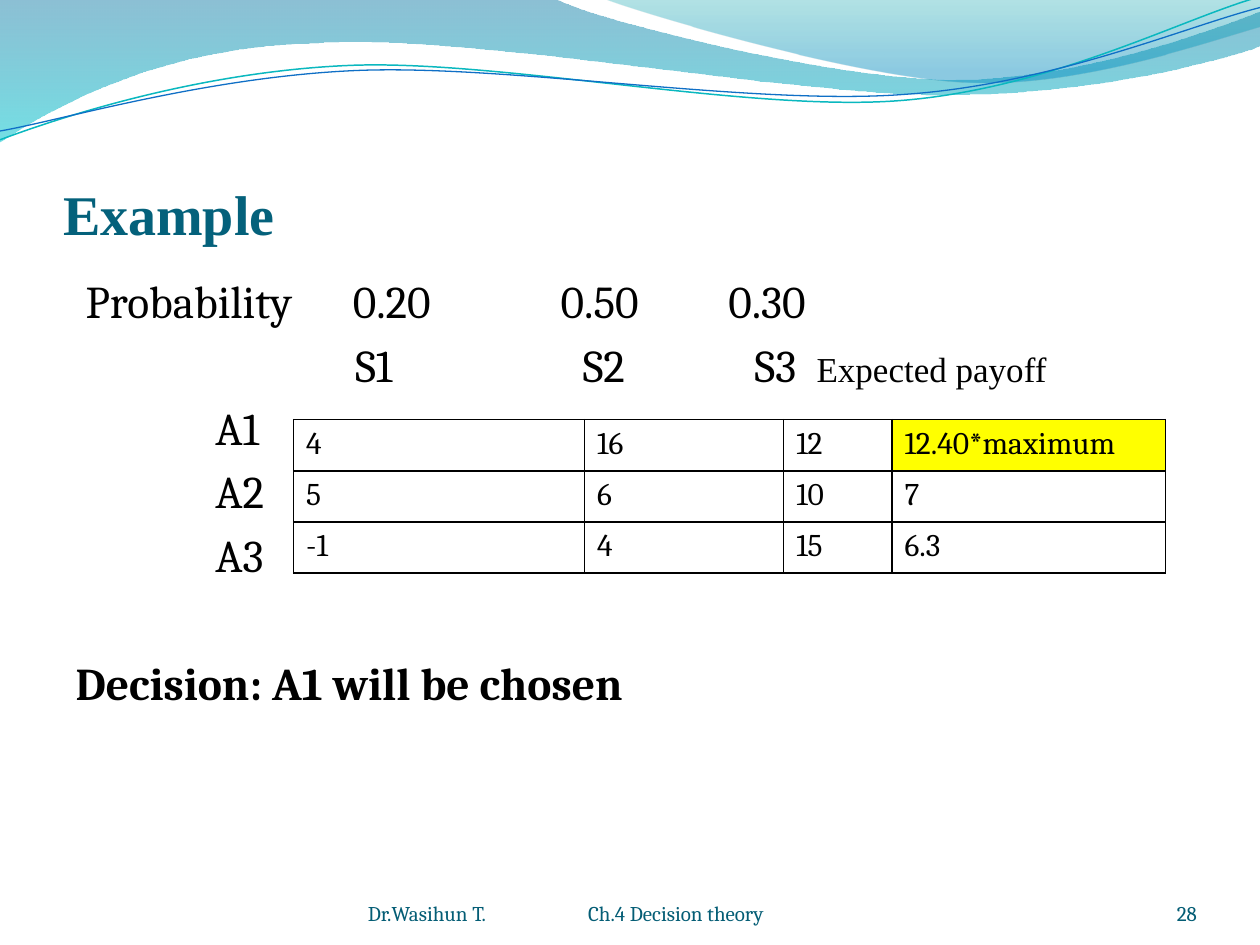
from lxml.etree import SubElement
from pptx import Presentation
from pptx.dml.color import RGBColor
from pptx.enum.text import MSO_ANCHOR as Anchor, MSO_AUTO_SIZE as AutoSize, PP_ALIGN as Align
from pptx.oxml.ns import qn
from pptx.util import Inches, Pt

THEME = {
    "serif": "Cambria", "display": "Times New Roman",
    "black": "000000", "title": "04617B", "footer": "045D75", "highlight": "FFFF00",
    "title_size": 32, "body_size": 26, "note_size": 20, "table_size": 18, "footer_size": 12,
}
SPACE_EM = 0.22  # width of a plain space in the serif font

TITLE = "Example"
NOTE = "Expected payoff"
# words, gaps between them, left margin, space before, bold
BODY = [
    (("Probability", "0.20", "0.50", "0.30"), (0.48, 1.03, 0.71), 0.08, 6, False),
    (("S1", "S2", "S3", NOTE), (1.51, 1.03, 0.16), 2.22, 5, False),
    (("A1",), (), 1.11, 5, False),
    (("A2",), (), 1.11, 5, False),
    (("A3",), (), 1.11, 5, False),
    (("Decision: A1 will be chosen",), (), 0, 42, True),
]
PAYOFFS = [
    ("4", "16", "12", "12.40*maximum"),
    ("5", "6", "10", "7"),
    ("-1", "4", "15", "6.3"),
]
BEST = (0, 3)
COLUMN_WIDTHS = (2.31, 1.58, 0.86, 2.17)
TABLE_HEIGHT = 1.22
# words, gaps, box, alignment
FOOTERS = [
    (("Dr.Wasihun T.", "Ch.4 Decision theory"), (0.81,), (2.92, 6.95, 3.67, 0.4), Align.LEFT),
    (("28",), (), (8.67, 6.95, 0.83, 0.4), Align.RIGHT),
]

# A pair is a straight segment, six numbers are a cubic curve
BANDS = [
    ([(0, 0), (4.4, -0.01), (4.76, 0.17, 6.64, 0.63, 7.58, 0.63),
      (8.53, 0.63, 9.58, 0.26, 10, 0.09), (10.01, 0.36),
      (9.83, 0.44, 8.7, 0.76, 7.46, 0.75), (6.22, 0.75, 3.82, 0.28, 2.57, 0.34),
      (1.29, 0.36, 0.46, 0.83, -0.01, 1.13)],
     [(0, "0074A1", 45), (1, "00C6CF", 55)]),
    ([(4.79, -0.01), (5.09, 0.11, 6.82, 0.62, 7.69, 0.65),
      (8.56, 0.69, 9.61, 0.32, 10, 0.21), (10, 0)],
     [(0, "00A1A9", 30), (0.8, "008BBF", 45)]),
]
WAVES = [
    ([(0, 1.11), (0.48, 0.93, 1.58, 0.57, 2.77, 0.52),
      (3.95, 0.47, 5.93, 0.89, 7.13, 0.8), (8.33, 0.71, 9.38, 0.15, 9.98, -0.02)],
     "0AB8BF", 0.85),
    ([(0, 1.04), (0.47, 0.96, 1.64, 0.61, 2.83, 0.56),
      (4.03, 0.51, 5.97, 0.84, 7.17, 0.75), (8.36, 0.67, 9.41, 0.21, 10, 0.06)],
     "0F6FC6", 0.75),
]


def color(name):
    return RGBColor.from_string(THEME.get(name, name))


def add_outline(slide, path, close):
    """Draw all points as lines, then join each curve's three lines into one curve."""
    points = [(Inches(segment[i]), Inches(segment[i + 1]))
              for segment in path for i in range(0, len(segment), 2)]
    builder = slide.shapes.build_freeform(*points[0])
    builder.add_line_segments(points[1:], close=close)
    shape = builder.convert_to_shape()
    shape.shadow.inherit = False
    lines = iter(shape.element.xpath(".//a:path/a:lnTo"))
    for segment in path[1:]:
        parts = [next(lines) for _ in range(len(segment) // 2)]
        if len(parts) == 3:
            curve = SubElement(parts[0].getparent(), qn("a:cubicBezTo"))
            parts[0].addprevious(curve)
            for part in parts:
                curve.append(part[0])
                part.getparent().remove(part)
    return shape


def add_band(slide, path, stops):
    shape = add_outline(slide, path, True)
    shape.line.fill.background()
    shape.fill.gradient()
    shape.fill.gradient_angle = 270
    for stop, (position, rgb, _) in zip(shape.fill.gradient_stops, stops):
        stop.color.rgb = color(rgb)
        stop.position = position
    for node, (_, _, opacity) in zip(shape.element.xpath(".//a:gs/a:srgbClr"), stops):
        SubElement(node, qn("a:alpha"), val=str(opacity * 1000))


def add_wave(slide, path, rgb, width):
    shape = add_outline(slide, path, False)
    shape.fill.background()
    shape.line.color.rgb = color(rgb)
    shape.line.width = Pt(width)


def write(paragraph, text, size="body_size", font="serif", rgb="black", bold=False, spacing=0):
    run = paragraph.add_run()
    run.text = text
    run.font.size = Pt(THEME[size])
    run.font.name = THEME[font]
    run.font.color.rgb = color(rgb)
    run.font.bold = bold
    if spacing:
        run._r.get_or_add_rPr().set("spc", str(round(spacing * 100)))


def write_spread(paragraph, words, gaps, size="body_size", **style):
    """Write words separated by single spaces widened to the given gaps."""
    for index, word in enumerate(words):
        if index:
            spacing = gaps[index - 1] * 72 - SPACE_EM * THEME[size]
            write(paragraph, " ", size=size, spacing=spacing, **style)
        if word == NOTE:
            write(paragraph, word, size="note_size", font="display")
        else:
            write(paragraph, word, size=size, **style)


def set_layout(paragraph, margin=0, before=0, align=Align.LEFT):
    """Set margin, spacing and alignment, with no bullet."""
    paragraph.alignment = align
    paragraph.space_before = Pt(before)
    properties = paragraph._p.get_or_add_pPr()
    properties.set("marL", str(Inches(margin)))
    properties.set("indent", "0")
    SubElement(properties, qn("a:buNone"))


def prepare(shape, box, insets, anchor):
    """Place a text shape and return its frame."""
    shape.left, shape.top, shape.width, shape.height = map(Inches, box)
    frame = shape.text_frame
    frame.word_wrap = True
    frame.auto_size = AutoSize.NONE
    frame.vertical_anchor = anchor
    (frame.margin_left, frame.margin_top,
     frame.margin_right, frame.margin_bottom) = map(Inches, insets)
    return frame


def add_footer(slide, words, gaps, box, align):
    shape = slide.shapes.add_textbox(*map(Inches, box))
    paragraph = prepare(shape, box, (0, 0, 0, 0), Anchor.BOTTOM).paragraphs[0]
    set_layout(paragraph, align=align)
    write_spread(paragraph, words, gaps, size="footer_size", rgb="footer")


def add_borders(cell):
    properties = cell._tc.get_or_add_tcPr()
    for side in ("lnL", "lnR", "lnT", "lnB"):
        line = SubElement(properties, qn(f"a:{side}"), w=str(Pt(1)))
        fill = SubElement(line, qn("a:solidFill"))
        SubElement(fill, qn("a:srgbClr"), val=THEME["black"])


def add_payoff_table(slide):
    table = slide.shapes.add_table(
        len(PAYOFFS), len(COLUMN_WIDTHS), Inches(2.33), Inches(3.33),
        Inches(sum(COLUMN_WIDTHS)), Inches(TABLE_HEIGHT)).table
    table.first_row = table.horz_banding = False
    for column, width in zip(table.columns, COLUMN_WIDTHS):
        column.width = Inches(width)
    for row_index, values in enumerate(PAYOFFS):
        for column_index, value in enumerate(values):
            cell = table.cell(row_index, column_index)
            add_borders(cell)
            if (row_index, column_index) == BEST:
                cell.fill.solid()
                cell.fill.fore_color.rgb = color("highlight")
            else:
                cell.fill.background()
            write(cell.text_frame.paragraphs[0], value, size="table_size")


def main():
    presentation = Presentation()
    presentation.slide_width, presentation.slide_height = Inches(10), Inches(7.5)
    slide = presentation.slides.add_slide(presentation.slide_layouts[1])
    title, body = slide.placeholders
    for band in BANDS:
        add_band(slide, *band)
    for wave in WAVES:
        add_wave(slide, *wave)
    for placeholder in (title, body):  # bring in front of the waves
        slide.shapes.element.append(placeholder.element)

    heading = prepare(title, (0.5, 0.77, 9, 1.25), (0, 0.05, 0, 0.06), Anchor.BOTTOM).paragraphs[0]
    set_layout(heading)
    write(heading, TITLE, size="title_size", font="display", rgb="title", bold=True)

    frame = prepare(body, (0.5, 2.12, 9, 4.8), (0.1, 0.05, 0.1, 0.05), Anchor.TOP)
    for index, (words, gaps, margin, before, bold) in enumerate(BODY):
        paragraph = frame.add_paragraph() if index else frame.paragraphs[0]
        set_layout(paragraph, margin, before)
        write_spread(paragraph, words, gaps, bold=bold)

    for footer in FOOTERS:
        add_footer(slide, *footer)
    add_payoff_table(slide)
    presentation.save("out.pptx")


if __name__ == "__main__":
    main()
